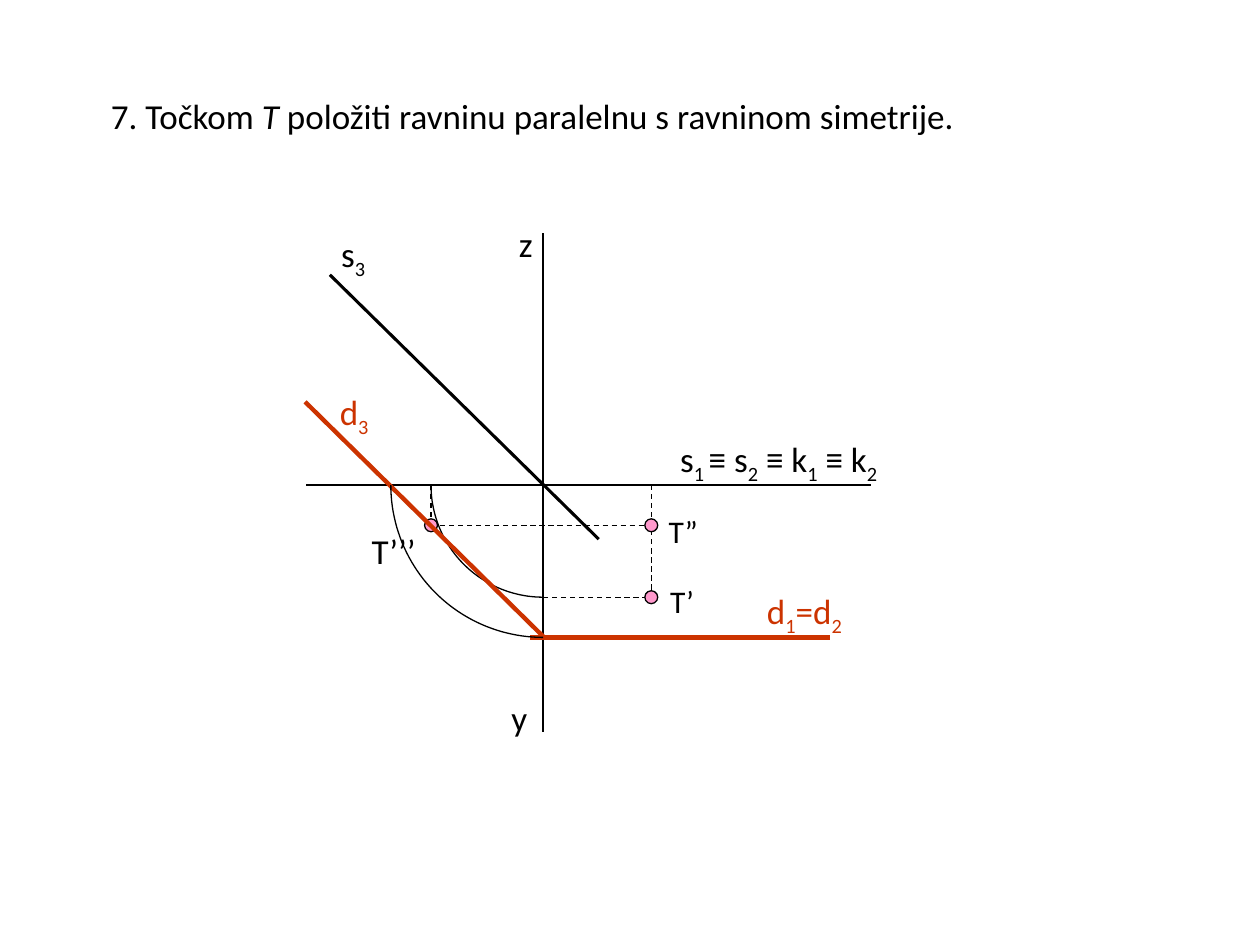
from dataclasses import dataclass
from math import cos, pi, sin

from lxml import etree
from pptx import Presentation
from pptx.dml.color import RGBColor
from pptx.enum.dml import MSO_LINE
from pptx.enum.shapes import MSO_CONNECTOR, MSO_SHAPE
from pptx.enum.text import MSO_ANCHOR, MSO_AUTO_SIZE, PP_ALIGN
from pptx.oxml.ns import qn
from pptx.slide import Slide
from pptx.text.text import TextFrame
from pptx.util import Cm, Pt

STRAIGHT = MSO_CONNECTOR.STRAIGHT
OVAL = MSO_SHAPE.OVAL
DASH = MSO_LINE.DASH
TOP = MSO_ANCHOR.TOP
NO_AUTOFIT = MSO_AUTO_SIZE.NONE
LEFT = PP_ALIGN.LEFT
TITLE_ONLY = 5


@dataclass(frozen=True)
class Theme:
    font: str = "Calibri"
    text_size: float = 20
    point_label_size: float = 18
    ink: RGBColor = RGBColor(0x00, 0x00, 0x00)
    plane: RGBColor = RGBColor(0xCC, 0x33, 0x00)
    point: RGBColor = RGBColor(0xFF, 0x99, 0xCC)
    thin: float = 0.75


@dataclass(frozen=True)
class Span:
    text: str
    subscript: bool = False
    italic: bool = False


@dataclass(frozen=True)
class Segment:
    start: tuple[float, float]
    end: tuple[float, float]
    width: float
    color: RGBColor
    dashed: bool = False


@dataclass(frozen=True)
class Label:
    spans: list[Span]
    left: float
    top: float
    width: float
    height: float = 1.12
    size: float = 20
    color: RGBColor = RGBColor(0x00, 0x00, 0x00)


THEME = Theme()

# Geometry of the projection, in centimetres
ORIGIN_X, ORIGIN_Y = 10.95, 9.78
POINT_RADIUS, TRACE_RADIUS = 2.26, 3.07
POINT_X = 13.13
SECOND_Y = 10.59
FIRST_Y = ORIGIN_Y + POINT_RADIUS
THIRD_X = ORIGIN_X - POINT_RADIUS
TRACE_Y = ORIGIN_Y + TRACE_RADIUS
DOT = 0.26
DOT_LEFT = POINT_X - DOT / 2

AXES_AND_SYMMETRY = [
    Segment((6.17, ORIGIN_Y), (17.55, ORIGIN_Y), 1.5, THEME.ink),
    Segment((ORIGIN_X, 4.7), (ORIGIN_X, 14.76), 1, THEME.ink),
    Segment((6.65, 5.54), (12.07, 10.87), 1.75, THEME.ink),
]
PROJECTORS = [
    Segment(start, end, THEME.thin, THEME.ink, dashed=True)
    for start, end in [
        ((POINT_X, ORIGIN_Y), (POINT_X, FIRST_Y)),
        ((THIRD_X, SECOND_Y), (DOT_LEFT, SECOND_Y)),
        ((ORIGIN_X, FIRST_Y), (DOT_LEFT, FIRST_Y)),
        ((THIRD_X, ORIGIN_Y), (THIRD_X, SECOND_Y)),
    ]
]
POINTS = [(POINT_X, SECOND_Y), (POINT_X, FIRST_Y), (THIRD_X, SECOND_Y)]
PLANE_TRACES = [
    Segment((6.15, 8.1), (10.97, TRACE_Y), 2.5, THEME.plane),
    Segment((10.69, TRACE_Y), (16.74, TRACE_Y), 2.5, THEME.plane),
]


def sub(text: str) -> Span:
    return Span(text, subscript=True)


TITLE = Label(
    [Span("7. Točkom "), Span("T", italic=True),
     Span(" položiti ravninu paralelnu s ravninom simetrije.")],
    1.98, 1.78, 20.62)
LABELS = [
    Label([Span("s"), sub("1 "), Span("≡ s"), sub("2"), Span(" ≡ k"), sub("1"),
           Span(" ≡ k"), sub("2")], 13.46, 8.69, 4.98),
    Label([Span("z")], 10.21, 4.37, 1.17),
    Label([Span("y")], 10.06, 13.92, 1.37),
    Label([Span("s"), sub("3")], 6.63, 4.57, 1.75),
    Label([Span("T’")], 13.26, 11.61, 1.52, 1.02, THEME.point_label_size),
    Label([Span("T”")], 13.23, 10.19, 1.57, 1.02, THEME.point_label_size),
    Label([Span("T’’’")], 7.24, 10.54, 1.78),
    Label([Span("d"), sub("3")], 6.6, 7.75, 1.19, color=THEME.plane),
    Label([Span("d"), sub("1"), Span("=d"), sub("2")], 15.21, 11.76, 2.06, 1.68,
          color=THEME.plane),
]


def write_label(frame: TextFrame, label: Label) -> None:
    frame.word_wrap = True
    frame.auto_size = NO_AUTOFIT
    frame.vertical_anchor = TOP
    paragraph = frame.paragraphs[0]
    paragraph.alignment = LEFT
    for span in label.spans:
        run = paragraph.add_run()
        run.text = span.text
        run.font.name = THEME.font
        run.font.size = Pt(label.size)
        run.font.color.rgb = label.color
        run.font.italic = span.italic
        if span.subscript:
            run._r.get_or_add_rPr().set("baseline", "-25000")


def add_title(slide: Slide, label: Label) -> None:
    title = slide.shapes.title
    title.left, title.top = Cm(label.left), Cm(label.top)
    title.width, title.height = Cm(label.width), Cm(label.height)
    write_label(title.text_frame, label)


def add_label(slide: Slide, label: Label) -> None:
    box = slide.shapes.add_textbox(
        Cm(label.left), Cm(label.top), Cm(label.width), Cm(label.height))
    write_label(box.text_frame, label)


def add_segment(slide: Slide, segment: Segment) -> None:
    connector = slide.shapes.add_connector(
        STRAIGHT, *(Cm(value) for value in segment.start + segment.end))
    connector.line.color.rgb = segment.color
    connector.line.width = Pt(segment.width)
    if segment.dashed:
        connector.line.dash_style = DASH
    etree.SubElement(connector._element.spPr, qn("a:effectLst"))


def add_point(slide: Slide, x: float, y: float) -> None:
    dot = slide.shapes.add_shape(
        OVAL, Cm(x - DOT / 2), Cm(y - DOT / 2), Cm(DOT), Cm(DOT))
    dot.shadow.inherit = False
    dot.fill.solid()
    dot.fill.fore_color.rgb = THEME.point
    dot.line.color.rgb = THEME.ink
    dot.line.width = Pt(THEME.thin)


def add_quarter_arc(slide: Slide, radius: float, steps: int = 45) -> None:
    """Draw the arc about the origin from the y axis to the ground line."""
    angles = [pi / 2 * (1 + step / steps) for step in range(steps + 1)]
    outline = [(Cm(ORIGIN_X + radius * cos(angle)), Cm(ORIGIN_Y + radius * sin(angle)))
               for angle in angles]
    builder = slide.shapes.build_freeform(*outline[0])
    builder.add_line_segments(outline[1:], close=False)
    arc = builder.convert_to_shape()
    arc.shadow.inherit = False
    arc.fill.background()
    arc.line.color.rgb = THEME.ink
    arc.line.width = Pt(THEME.thin)


def main() -> None:
    presentation = Presentation()
    presentation.slide_width, presentation.slide_height = Cm(25.4), Cm(19.05)
    slide = presentation.slides.add_slide(presentation.slide_layouts[TITLE_ONLY])
    add_title(slide, TITLE)
    for segment in AXES_AND_SYMMETRY + PROJECTORS:
        add_segment(slide, segment)
    for x, y in POINTS:
        add_point(slide, x, y)
    add_quarter_arc(slide, POINT_RADIUS)
    for segment in PLANE_TRACES:
        add_segment(slide, segment)
    add_quarter_arc(slide, TRACE_RADIUS)
    for label in LABELS:
        add_label(slide, label)
    presentation.save("out.pptx")


if __name__ == "__main__":
    main()
